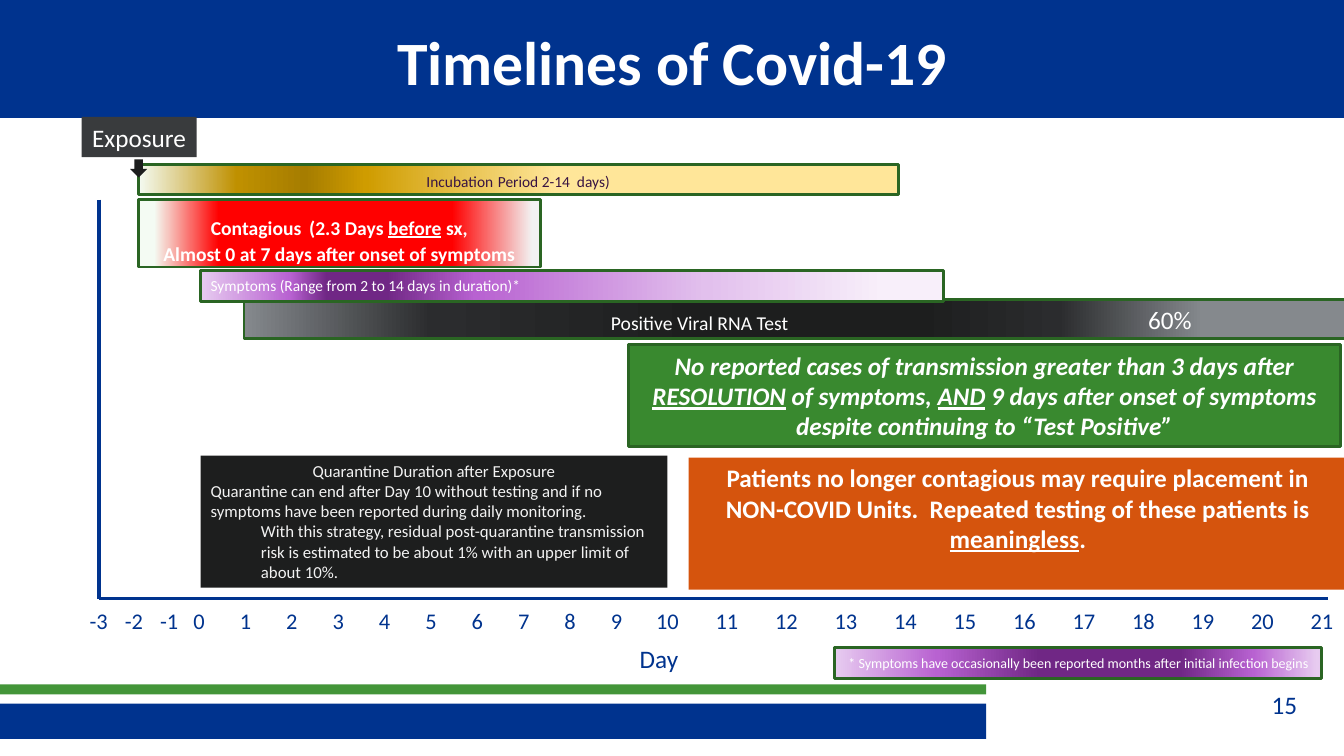
from dataclasses import dataclass
from typing import NamedTuple

from lxml import etree
from pptx import Presentation
from pptx.dml.color import RGBColor
from pptx.enum.shapes import MSO_CONNECTOR as Connector, MSO_SHAPE as Preset
from pptx.enum.text import MSO_ANCHOR as Anchor, PP_ALIGN as Align
from pptx.oxml.ns import qn
from pptx.util import Inches, Pt


@dataclass(frozen=True)
class Theme:
    font: str = "Calibri"
    white: str = "FFFFFF"
    pale: str = "F2F2F2"
    navy: str = "00338E"
    stripe: str = "439539"
    border: str = "2A6523"
    green: str = "39892F"
    orange: str = "D5540D"
    black: str = "1D1E1E"
    charcoal: str = "393B3D"
    plum: str = "381442"
    incubation: tuple = ((0, "F4FBF3"), (13, "BF9000"), (22, "A67D00"), (30, "CF9C00"), (55, "FFE699"))
    contagious: tuple = ((4, "F4FBF3"), (20, "FF0000"), (42, "FF0000"), (61, "FF0000"),
                         (78, "FF0000"), (98, "F2F2F2"))
    symptoms: tuple = ((0, "E7CBF0"), (12, "B862D1"), (17, "702785"), (25, "702785"),
                       (37, "B862D1"), (68, "E2C0ED"), (92, "F8EFFA"))
    footnote: tuple = ((0, "E7CBF0"), (21, "B862D1"), (42, "702785"), (71, "702785"),
                       (86, "B862D1"), (99, "E7CBF0"))
    rna: tuple = ((0, "85898D"), (17, "2B2C2E"), (42, "1D1E1E"), (61, "1D1E1E"),
                  (74, "2B2C2E"), (87, "85898D"))
    title_size: int = 44
    large: int = 18
    axis_size: int = 16
    medium: int = 14
    body: int = 12
    small: int = 11
    note: int = 10
    border_width: float = 2
    axis_width: float = 2.5


THEME = Theme()


class Box(NamedTuple):
    left: float
    top: float
    width: float
    height: float

    def inner(self, dx, dy, width, height):
        return Box(self.left + dx, self.top + dy, width, height)

    def lengths(self):
        return [Inches(value) for value in self]


def style(font, size, color, bold=None, italic=None):
    font.name = THEME.font
    font.size = Pt(size)
    font.color.rgb = RGBColor.from_string(color)
    font.bold = bold
    font.italic = italic


def write(shape, paragraphs, size, color=THEME.white, align=Align.CENTER, anchor=Anchor.MIDDLE,
          wrap=True, bold=None, italic=None):
    frame = shape.text_frame
    frame.word_wrap = wrap
    frame.vertical_anchor = anchor
    for index, runs in enumerate(paragraphs):
        paragraph = frame.paragraphs[0] if index == 0 else frame.add_paragraph()
        paragraph.alignment = align
        style(paragraph.font, size, color, bold, italic)
        for content in [runs] if isinstance(runs, str) else runs:
            words, emphasis = (content, None) if isinstance(content, str) else content
            run = paragraph.add_run()
            run.text = words
            if emphasis == "underline":
                run.font.underline = True
            elif emphasis:
                run.font.size = Pt(emphasis)
    return frame


def label(slide, box, words, size, color=THEME.navy, **options):
    text = slide.shapes.add_textbox(*box.lengths())
    return write(text, [words], size, color, **options)


def block(slide, box, fill, bordered=False, preset=Preset.RECTANGLE):
    shape = slide.shapes.add_shape(preset, *box.lengths())
    shape.shadow.inherit = False
    if isinstance(fill, str):
        shape.fill.solid()
        shape.fill.fore_color.rgb = RGBColor.from_string(fill)
    else:
        shape.fill.gradient()
        shape.fill.gradient_angle = 0
        stops = shape._element.spPr.find(".//" + qn("a:gsLst"))
        for stop in list(stops):
            stops.remove(stop)
        for percent, color in fill:
            stop = etree.SubElement(stops, qn("a:gs"), pos=str(percent * 1000))
            etree.SubElement(stop, qn("a:srgbClr"), val=color)
    if bordered:
        shape.line.color.rgb = RGBColor.from_string(THEME.border)
        shape.line.width = Pt(THEME.border_width)
    else:
        shape.line.fill.background()
    return shape


def add_header(slide, box):
    block(slide, box, THEME.navy)
    label(slide, box.inner(0.67, 0.19, 12, 0.83), "Timelines of Covid-19",
          THEME.title_size, THEME.white, bold=True)


def add_footer(slide, box):
    block(slide, box.inner(0, 0.19, box.width, 0.35), THEME.navy)
    block(slide, box.inner(0, 0, box.width, 0.1), THEME.stripe)
    label(slide, box.inner(12.54, 0, 0.46, 0.4), "15", THEME.large, wrap=False)


def add_axes(slide, box):
    bottom = box.top + box.height
    for start, end in (((box.left, box.top), (box.left, bottom)),
                       ((box.left, bottom), (box.left + box.width, bottom))):
        axis = slide.shapes.add_connector(
            Connector.STRAIGHT, *(Inches(value) for value in start + end))
        axis.line.color.rgb = RGBColor.from_string(THEME.navy)
        axis.line.width = Pt(THEME.axis_width)
        etree.SubElement(axis._element.spPr, qn("a:effectLst"))
    for first, last, offset, step, width in ((-3, -1, -0.19, 0.35, 0.42),
                                             (0, 9, 0.84, 0.46, 0.34),
                                             (10, 21, 5.43, 0.59, 0.43)):
        for day in range(first, last + 1):
            place = box.inner(offset + step * (day - first), box.height + 0.03, width, 0.37)
            frame = label(slide, place, str(day), THEME.axis_size, align=Align.LEFT)
            frame.margin_right = 0
    label(slide, box.inner(5.26, box.height + 0.39, 0.59, 0.4), "Day", THEME.large, wrap=False)
    footnote = block(slide, box.inner(7.3, box.height + 0.48, 4.83, 0.31), THEME.footnote, True)
    write(footnote, ["* Symptoms have occasionally been reported months after initial infection begins"],
          THEME.note)


def add_phases(slide, box):
    rna = block(slide, box.inner(1.44, 1.81, 10.93, 0.39), THEME.rna, True)
    write(rna, ["60%"], THEME.large, align=Align.RIGHT).margin_right = Inches(1.53)
    label(slide, box.inner(4.97, 1.87, 1.98, 0.34), "Positive Viral RNA Test",
          THEME.medium, THEME.white, wrap=False)
    symptoms = block(slide, box.inner(1.01, 1.52, 7.37, 0.31), THEME.symptoms, True)
    write(symptoms, ["Symptoms (Range from 2 to 14 days in duration)*"], THEME.small, align=Align.LEFT)
    contagious = block(slide, box.inner(0.39, 0.82, 3.99, 0.67), THEME.contagious, True)
    write(contagious, [["Contagious", (" ", 24), "(2.3 Days ", ("before", "underline"), " sx,"],
                       "Almost 0 at 7 days after onset of symptoms"], THEME.medium, bold=True)
    incubation = block(slide, box.inner(0.39, 0.47, 7.54, 0.3), THEME.incubation, True)
    write(incubation, [["Incubation", (" ", THEME.medium), "Period 2-14  days)"]],
          THEME.small, THEME.plum)
    exposure = block(slide, box.inner(-0.17, 0, 1.14, 0.4), THEME.charcoal)
    write(exposure, ["Exposure"], THEME.large, wrap=False)
    block(slide, box.inner(0.31, 0.42, 0.17, 0.18), THEME.black, preset=Preset.DOWN_ARROW)


def add_guidance(slide, box):
    transmission = block(slide, box.inner(4.24, 0, 7.07, 1.01), THEME.green, True)
    write(transmission, [["No reported cases of transmission greater than 3 days after ",
                          ("RESOLUTION", "underline"), " of symptoms, ", ("AND", "underline"),
                          " 9 days after onset of symptoms despite continuing to “Test Positive”"]],
          THEME.large, bold=True, italic=True)
    placement = block(slide, box.inner(4.84, 1.12, 6.53, 1.31), THEME.orange)
    write(placement, [["Patients no longer contagious may require placement in NON-COVID Units.  "
                       "Repeated testing of these patients is ", ("meaningless", "underline"), "."]],
          THEME.large, anchor=Anchor.TOP, bold=True)
    quarantine = block(slide, box.inner(0, 1.1, 4.63, 1.31), THEME.black)
    frame = write(quarantine, [
        "Quarantine Duration after Exposure",
        "Quarantine can end after Day 10 without testing and if no symptoms have been "
        "reported during daily monitoring.",
        "With this strategy, residual post-quarantine transmission risk is estimated to be "
        "about 1% with an upper limit of about 10%."],
        THEME.body, THEME.pale, align=Align.LEFT, anchor=Anchor.TOP)
    heading, _, risk = frame.paragraphs
    heading.alignment = Align.CENTER
    risk.level = 1
    indent = risk._p.get_or_add_pPr()
    indent.set("marL", str(Inches(0.5)))
    indent.set("indent", "0")


def main():
    deck = Presentation()
    deck.slide_width, deck.slide_height = Inches(13.33), Inches(7.5)
    slide = deck.slides.add_slide(deck.slide_layouts[6])
    add_footer(slide, Box(-0.03, 6.79, 9.81, 0.54))
    add_header(slide, Box(0, 0, 13.33, 1.17))
    add_axes(slide, Box(0.98, 1.98, 12.19, 3.96))
    add_phases(slide, Box(0.98, 1.16, 12.37, 2.2))
    add_guidance(slide, Box(1.99, 3.42, 11.37, 2.43))
    deck.save("out.pptx")


if __name__ == "__main__":
    main()
